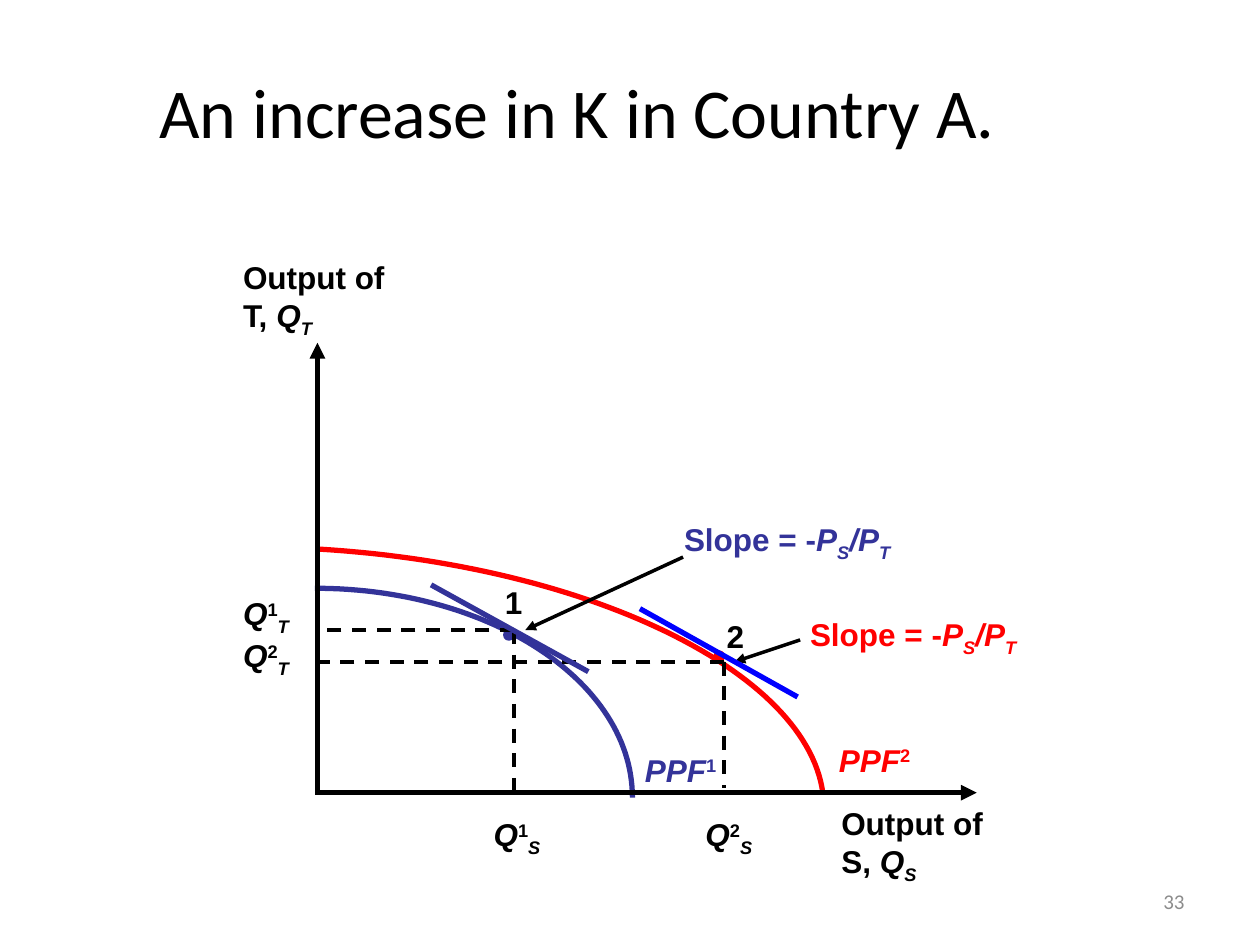
"""Build a slide showing how more capital shifts Country A's production frontier."""
from lxml.etree import SubElement
from pptx import Presentation
from pptx.dml.color import RGBColor
from pptx.enum.dml import MSO_LINE
from pptx.enum.shapes import MSO_CONNECTOR, MSO_SHAPE
from pptx.enum.text import MSO_ANCHOR, PP_ALIGN
from pptx.oxml.ns import qn
from pptx.util import Cm, Pt

BLACK = RGBColor(0x00, 0x00, 0x00)
INDIGO = RGBColor(0x33, 0x33, 0x99)
RED = RGBColor(0xFF, 0x00, 0x00)
BLUE = RGBColor(0x00, 0x00, 0xFF)
GRAY = RGBColor(0x8C, 0x8C, 0x8C)

BASELINES = {"^": "30000", "_": "-25000"}
SLOPE = [[("Slope = -", ""), ("P", "i"), ("S", "i_"), ("/P", "i"), ("T", "i_")]]


class Diagram:
    def __init__(self, slide, font="Arial", size=18):
        self.s = slide
        self.font = font
        self.size = size

    def style(self, r, color, marks="", bold=True, font=None, size=None):
        r.font.name = font or self.font
        r.font.size = Pt(size or self.size)
        r.font.bold = bold
        r.font.italic = "i" in marks
        r.font.color.rgb = color
        for mark, baseline in BASELINES.items():
            if mark in marks:
                r._r.get_or_add_rPr().set("baseline", baseline)

    def box(self, x, y, w, h):
        return self.s.shapes.add_textbox(Cm(x), Cm(y), Cm(w), Cm(h)).text_frame

    def label(self, x, y, w, paragraphs, color=BLACK, wrap=True):
        tf = self.box(x, y, w, 0.26 + 0.76 * len(paragraphs))
        tf.word_wrap = wrap
        for i, pieces in enumerate(paragraphs):
            p = tf.add_paragraph() if i else tf.paragraphs[0]
            for text, marks in pieces:
                r = p.add_run()
                r.text = text
                self.style(r, color, marks)

    def heading(self, x, y, w, h, text, size, color, align):
        tf = self.box(x, y, w, h)
        tf.word_wrap = True
        tf.vertical_anchor = MSO_ANCHOR.MIDDLE
        tf.text = text
        p = tf.paragraphs[0]
        p.alignment = align
        self.style(p.runs[0], color, bold=False, font="Calibri", size=size)

    def line(self, start, end, color=BLACK, width=2, dash=False, arrow=False):
        c = self.s.shapes.add_connector(
            MSO_CONNECTOR.STRAIGHT, *(Cm(v) for v in (*start, *end)))
        c.line.color.rgb = color
        c.line.width = Pt(width)
        if dash:
            c.line.dash_style = MSO_LINE.DASH
        if arrow:
            SubElement(c.line._get_or_add_ln(), qn("a:tailEnd"), type="triangle")
        SubElement(c._element.spPr, qn("a:effectLst"))

    def curve(self, controls, color, steps=60):
        points = []
        for i in range(steps + 1):
            t = i / steps
            weights = ((1 - t) ** 3, 3 * t * (1 - t) ** 2, 3 * t * t * (1 - t), t ** 3)
            points.append(tuple(
                Cm(sum(w * v for w, v in zip(weights, axis))) for axis in zip(*controls)))
        fb = self.s.shapes.build_freeform(*points[0])
        fb.add_line_segments(points[1:], close=False)
        sp = fb.convert_to_shape()
        sp.shadow.inherit = False
        sp.fill.background()
        sp.line.color.rgb = color
        sp.line.width = Pt(3)

    def dot(self, x, y, color, size=0.2):
        sp = self.s.shapes.add_shape(
            MSO_SHAPE.OVAL, Cm(x), Cm(y), Cm(size), Cm(size))
        sp.shadow.inherit = False
        sp.fill.solid()
        sp.fill.fore_color.rgb = color
        sp.line.color.rgb = color
        sp.line.width = Pt(1)


def main():
    prs = Presentation()
    prs.slide_width, prs.slide_height = Cm(25.4), Cm(19.05)
    d = Diagram(prs.slides.add_slide(prs.slide_layouts[6]))

    d.heading(0.84, 0.64, 21.59, 3.18, "An increase in K in Country A.",
              40, BLACK, PP_ALIGN.CENTER)

    d.dot(10.16, 12.7, INDIGO)
    d.curve([(6.35, 11.86), (9.88, 11.86), (12.75, 13.74), (12.75, 16.08)], INDIGO)
    d.curve([(6.43, 11.07), (11.9, 11.4), (16.28, 13.56), (16.59, 16)], RED)

    d.line((6.4, 16), (6.4, 6.91), width=3, arrow=True)
    d.line((6.35, 15.98), (19.69, 15.98), width=3, arrow=True)
    for x, y, w, good, sub in ((4.65, 5.08, 3.61, "T, ", "T"),
                               (16.71, 16.08, 3.81, "S, ", "S")):
        d.label(x, y, w, [[("Output of", "")], [(good, ""), ("Q", "i"), (sub, "i_")]])

    d.line((16.13, 12.9), (14.81, 13.34), arrow=True)
    d.line((13.77, 11.23), (10.59, 12.7), arrow=True)
    d.label(16.08, 12.27, 5.28, SLOPE, RED)
    d.label(13.54, 10.36, 4.88, SLOPE, INDIGO)

    d.dot(14.4, 13.13, RED)
    for x, y, bottom in ((14.6, 13.34, 15.88), (10.36, 12.7, 16.08)):
        d.line((x, y), (x, bottom), dash=True)
        d.line((x, y), (6.35, y), dash=True)

    for x, y, number, sub in ((4.65, 11.86, "1", "T"), (4.65, 12.7, "2", "T"),
                              (9.7, 16.31, "1", "S"), (13.97, 16.31, "2", "S")):
        d.label(x, y, 1.9, [[("Q", "i"), (number, "^"), (sub, "i_")]])
    for x, y, number, color in ((12.75, 15.01, "1", INDIGO), (16.66, 14.81, "2", RED)):
        d.label(x, y, 2.4, [[("PPF", "i"), (number, "^")]], color)
    for x, y, number in ((9.93, 11.63, "1"), (14.4, 12.32, "2")):
        d.label(x, y, 0.86, [[(number, "")]], wrap=False)

    d.line((8.69, 11.79), (11.86, 13.54), INDIGO, 3)
    d.line((12.9, 12.27), (16.08, 14.05), BLUE, 3)
    d.heading(18.21, 17.65, 5.92, 1.02, "33", 12, GRAY, PP_ALIGN.RIGHT)
    prs.save("out.pptx")


if __name__ == "__main__":
    main()
